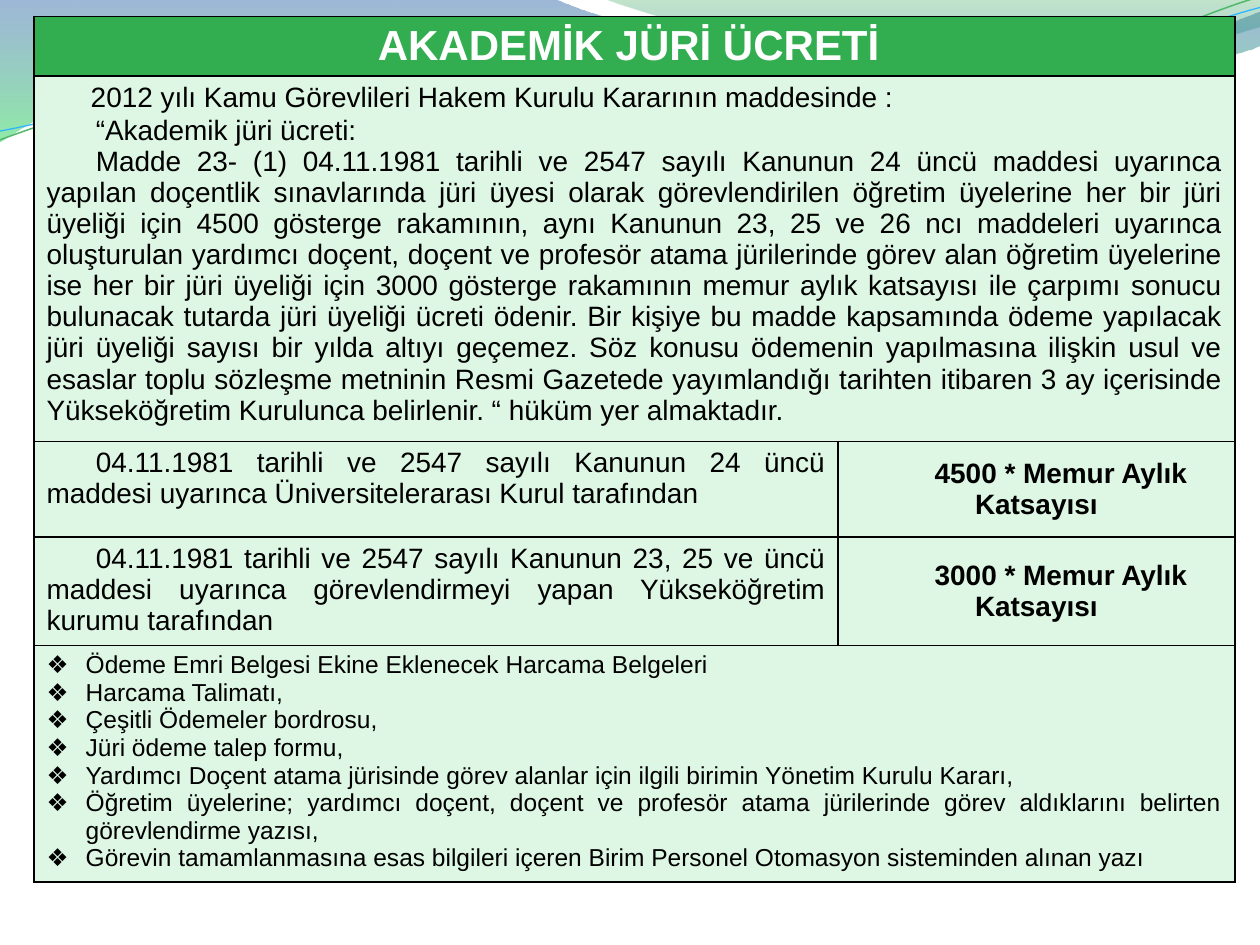
import math
from dataclasses import dataclass

import lxml.etree
import pptx
import pptx.dml.color
import pptx.enum.text
import pptx.oxml.ns
import pptx.util

GRID_COLUMNS, GRID_ROWS = 10, 7.5
CELL = pptx.util.Inches(1)
FONT = "Arial"
COLORS = {
    "white": "FFFFFF", "ink": "000000", "header": "32AE51", "mint": "DEF6E4",
    "navy": "2960A7", "lime": "35DA5E", "leaf": "36A752", "blue": "2472D3",
    "green line": "50B86A", "sky line": "31B6FD",
}
ALIGN = pptx.enum.text.PP_ALIGN
ANCHOR = pptx.enum.text.MSO_ANCHOR
Point = tuple[float, float]
qn = pptx.oxml.ns.qn


@dataclass
class Stop:
    position: float
    color: str
    opacity: int


@dataclass
class Wave:
    start: Point
    segments: list[tuple[Point, ...]]
    stops: tuple[Stop, ...] = ()
    line: str = ""
    weight: float = 0
    tilt: float = 0
    center: Point = (0, 0)


@dataclass
class Paragraph:
    text: str
    align: ALIGN = ALIGN.JUSTIFY
    size: float = 16
    bold: bool = False
    color: str = "ink"
    margin: float = 0
    indent: float = 0.39
    bullet: str = ""
    after: float = 0


@dataclass
class Entry:
    row: int
    column: int
    paragraphs: list[Paragraph]
    fill: str = "mint"
    anchor: ANCHOR = ANCHOR.TOP
    wide: bool = False


def grid(cells: float) -> int:
    return round(cells * CELL)


def rgb(name: str) -> pptx.dml.color.RGBColor:
    return pptx.dml.color.RGBColor.from_string(COLORS[name])


def level(point: Point, wave: Wave) -> Point:
    angle = math.radians(-wave.tilt)
    dx, dy = point[0] - wave.center[0], point[1] - wave.center[1]
    return (grid(wave.center[0] + dx * math.cos(angle) - dy * math.sin(angle)),
            grid(wave.center[1] + dx * math.sin(angle) + dy * math.cos(angle)))


def bend(shape, segments: list[tuple[Point, ...]]) -> None:
    corners = iter(list(shape._element.spPr.iter(qn("a:lnTo"))))
    for segment in segments:
        group = [next(corners) for _ in segment]
        if len(group) == 3:
            curve = lxml.etree.Element(qn("a:cubicBezTo"))
            group[0].addprevious(curve)
            for corner in group:
                curve.append(corner[0])
                corner.getparent().remove(corner)


def draw_wave(slide, wave: Wave) -> None:
    builder = slide.shapes.build_freeform(*level(wave.start, wave))
    points = [level(point, wave) for segment in wave.segments for point in segment]
    builder.add_line_segments(points, close=bool(wave.stops))
    shape = builder.convert_to_shape()
    bend(shape, wave.segments)
    shape.rotation = wave.tilt
    shape.shadow.inherit = False
    if not wave.stops:
        shape.fill.background()
        shape.line.color.rgb = rgb(wave.line)
        shape.line.width = pptx.util.Pt(wave.weight)
        return
    shape.line.fill.background()
    shape.fill.gradient()
    shape.fill.gradient_angle = 270
    for target, stop in zip(shape.fill.gradient_stops, wave.stops):
        target.position = stop.position
        target.color.rgb = rgb(stop.color)
    for color, stop in zip(shape._element.spPr.iter(qn("a:srgbClr")), wave.stops):
        lxml.etree.SubElement(color, qn("a:alpha"), val=str(stop.opacity * 1000))


def write_paragraph(target, content: Paragraph) -> None:
    target.alignment = content.align
    if content.after:
        target.space_after = pptx.util.Pt(content.after)
    properties = target._p.get_or_add_pPr()
    for name, length in {"marL": content.margin, "indent": content.indent}.items():
        properties.set(name, str(grid(length)))
    if content.bullet:
        lxml.etree.SubElement(properties, qn("a:buFont"), typeface=FONT)
        lxml.etree.SubElement(properties, qn("a:buChar"), char=content.bullet)
    run = target.add_run()
    run.text = content.text
    styles = {"name": FONT, "size": pptx.util.Pt(content.size), "bold": content.bold}
    for name, value in styles.items():
        setattr(run.font, name, value)
    run.font.color.rgb = rgb(content.color)


def add_borders(cell) -> None:
    properties = cell._tc.get_or_add_tcPr()
    for index, side in enumerate(("lnL", "lnR", "lnT", "lnB")):
        border = lxml.etree.Element(qn(f"a:{side}"), w=str(pptx.util.Pt(1)))
        fill = lxml.etree.SubElement(border, qn("a:solidFill"))
        lxml.etree.SubElement(fill, qn("a:srgbClr"), val=COLORS["ink"])
        properties.insert(index, border)


def draw_table(slide, left: float, top: float, height: float, columns: list[float],
               rows: list[float], entries: list[Entry]) -> None:
    frame = slide.shapes.add_table(len(rows), len(columns), grid(left), grid(top),
                                   grid(sum(columns)), grid(height))
    table = frame.table
    for flag in ("first_row", "horz_banding"):
        setattr(table, flag, False)
    for column, width in zip(table.columns, columns):
        column.width = grid(width)
    for row, row_height in zip(table.rows, rows):
        row.height = grid(row_height)
    frame.height = grid(height)
    for entry in entries:
        cell = table.cell(entry.row, entry.column)
        if entry.wide:
            cell.merge(table.cell(entry.row, len(columns) - 1))
        cell.fill.solid()
        cell.fill.fore_color.rgb = rgb(entry.fill)
        cell.vertical_anchor = entry.anchor
        text = cell.text_frame
        for index, content in enumerate(entry.paragraphs):
            write_paragraph(text.add_paragraph() if index else text.paragraphs[0], content)
    for cell in table.iter_cells():
        add_borders(cell)


WAVES = [
    Wave((0, 0), [((4.4, -0.01),), ((4.76, 0.17), (6.64, 0.63), (7.58, 0.63)),
                  ((8.53, 0.63), (9.58, 0.26), (10, 0.09)), ((10.01, 0.36),),
                  ((9.83, 0.44), (8.7, 0.76), (7.46, 0.75)),
                  ((6.22, 0.75), (3.82, 0.28), (2.57, 0.34)),
                  ((1.29, 0.36), (0.46, 0.83), (-0.01, 1.13)), ((0, 0),)],
         stops=(Stop(0, "navy", 45), Stop(1, "lime", 55))),
    Wave((4.79, -0.01), [((5.09, 0.11), (6.82, 0.62), (7.69, 0.65)),
                         ((8.56, 0.69), (9.61, 0.32), (10, 0.21)), ((10, 0),), ((4.79, -0.01),)],
         stops=(Stop(0, "leaf", 30), Stop(0.8, "blue", 45))),
    Wave((0, 1.11), [((0.48, 0.93), (1.58, 0.57), (2.77, 0.52)),
                     ((3.95, 0.47), (5.93, 0.89), (7.13, 0.8)),
                     ((8.33, 0.71), (9.38, 0.15), (9.98, -0.02))],
         line="green line", weight=0.85, tilt=357.3, center=(4.99, 0.58)),
    Wave((0, 1.04), [((0.47, 0.96), (1.64, 0.61), (2.83, 0.56)),
                     ((4.03, 0.51), (5.97, 0.84), (7.17, 0.75)),
                     ((8.36, 0.67), (9.41, 0.21), (10, 0.06))],
         line="sky line", weight=0.75, tilt=357.3, center=(5, 0.59)),
]
ARTICLE = [
    Paragraph("2012 yılı Kamu Görevlileri Hakem Kurulu Kararının maddesinde :", indent=0.35, after=1),
    Paragraph("“Akademik jüri ücreti:"),
    Paragraph("Madde 23- (1) 04.11.1981 tarihli ve 2547 sayılı Kanunun 24 üncü maddesi uyarınca yapılan doçentlik sınavlarında jüri üyesi olarak görevlendirilen öğretim üyelerine her bir jüri üyeliği için 4500 gösterge rakamının, aynı Kanunun 23, 25 ve 26 ncı maddeleri uyarınca oluşturulan yardımcı doçent, doçent ve profesör atama jürilerinde görev alan öğretim üyelerine ise her bir jüri üyeliği için 3000 gösterge rakamının memur aylık katsayısı ile çarpımı sonucu bulunacak tutarda jüri üyeliği ücreti ödenir. Bir kişiye bu madde kapsamında ödeme yapılacak jüri üyeliği sayısı bir yılda altıyı geçemez. Söz konusu ödemenin yapılmasına ilişkin usul ve esaslar toplu sözleşme metninin Resmi Gazetede yayımlandığı tarihten itibaren 3 ay içerisinde Yükseköğretim Kurulunca belirlenir. “ hüküm yer almaktadır."),
]
FEES = [
    ("04.11.1981 tarihli ve 2547 sayılı Kanunun 24 üncü maddesi uyarınca Üniversitelerarası Kurul tarafından", 4500),
    ("04.11.1981 tarihli ve 2547 sayılı Kanunun 23, 25 ve üncü maddesi uyarınca görevlendirmeyi yapan Yükseköğretim kurumu tarafından", 3000),
]
DOCUMENTS = [
    "Ödeme Emri Belgesi Ekine Eklenecek Harcama Belgeleri", "Harcama Talimatı,",
    "Çeşitli Ödemeler bordrosu,", "Jüri ödeme talep formu,",
    "Yardımcı Doçent atama jürisinde görev alanlar için ilgili birimin Yönetim Kurulu Kararı,",
    "Öğretim üyelerine; yardımcı doçent, doçent ve profesör atama jürilerinde görev aldıklarını belirten görevlendirme yazısı,",
    "Görevin tamamlanmasına esas bilgileri içeren Birim Personel Otomasyon sisteminden alınan yazı",
]


def main() -> None:
    deck = pptx.Presentation()
    deck.slide_width, deck.slide_height = grid(GRID_COLUMNS), grid(GRID_ROWS)
    slide = deck.slides.add_slide(deck.slide_layouts[6])
    for wave in WAVES:
        draw_wave(slide, wave)
    heading = Paragraph("AKADEMİK JÜRİ ÜCRETİ ", ALIGN.CENTER, 24, True, "white", indent=0)
    entries = [Entry(0, 0, [heading], "header", wide=True), Entry(1, 0, ARTICLE, wide=True)]
    for row, (basis, points) in enumerate(FEES, start=2):
        fee = Paragraph(f"{points} * Memur Aylık Katsayısı", ALIGN.CENTER, bold=True)
        entries += [Entry(row, 0, [Paragraph(basis)]), Entry(row, 1, [fee], anchor=ANCHOR.MIDDLE)]
    listed = [Paragraph(text, size=14, margin=0.31, indent=-0.31, bullet="❖") for text in DOCUMENTS]
    entries.append(Entry(4, 0, listed, wide=True))
    draw_table(slide, 0.27, 0.13, 7.16, [6.38, 3.15], [0.35, 2.9, 0.76, 0.86, 1.88], entries)
    deck.save("out.pptx")


if __name__ == "__main__":
    main()
